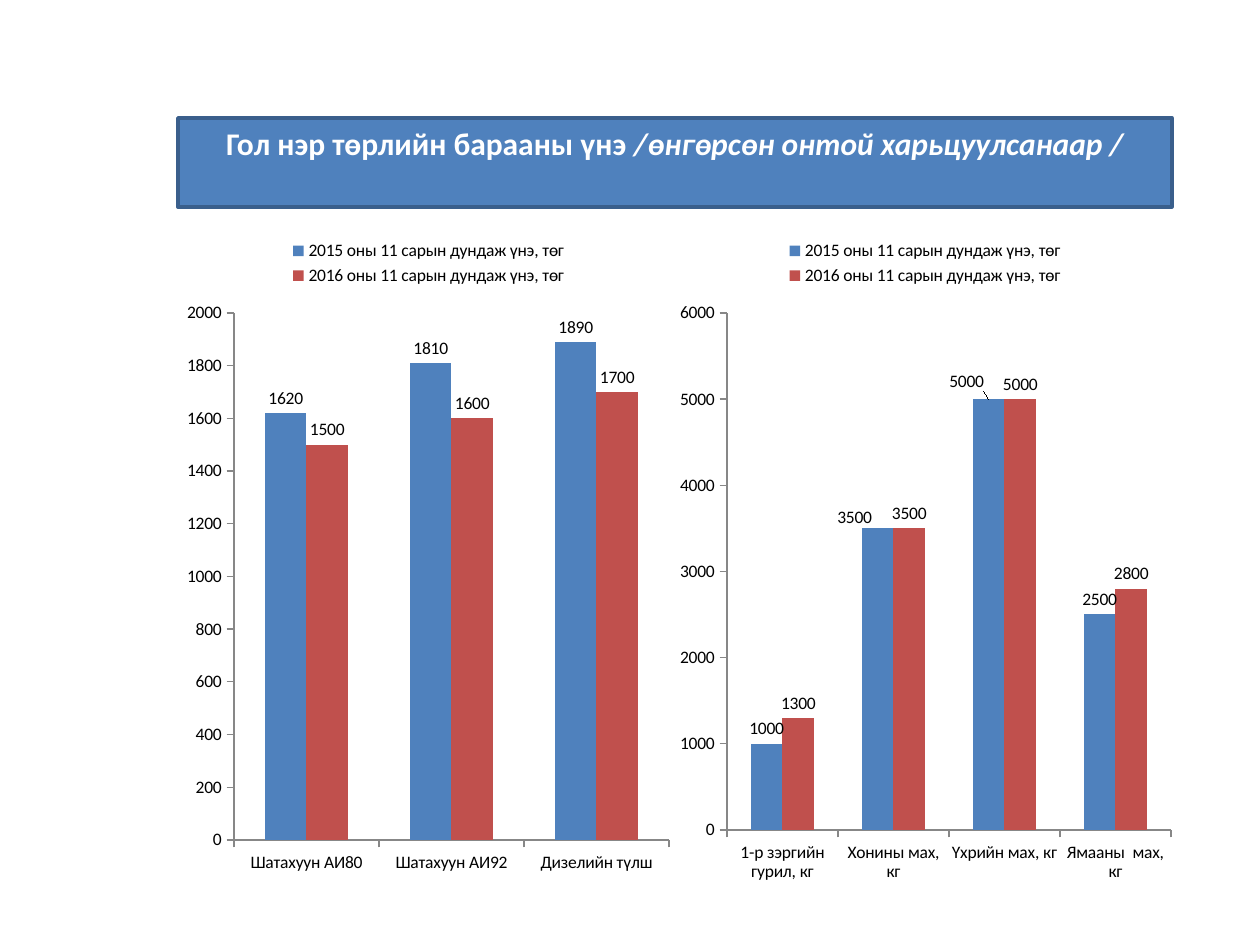
from lxml import etree
from pptx import Presentation
from pptx.chart.data import CategoryChartData
from pptx.dml.color import RGBColor
from pptx.enum.chart import XL_CHART_TYPE, XL_LABEL_POSITION, XL_LEGEND_POSITION, XL_TICK_MARK
from pptx.enum.shapes import MSO_SHAPE
from pptx.enum.text import MSO_ANCHOR, PP_ALIGN
from pptx.oxml.ns import qn
from pptx.util import Emu, Pt

COLUMNS = XL_CHART_TYPE.COLUMN_CLUSTERED
OUTSIDE_END = XL_LABEL_POSITION.OUTSIDE_END
LEGEND_TOP = XL_LEGEND_POSITION.TOP
TICK_OUT, TICK_NONE = XL_TICK_MARK.OUTSIDE, XL_TICK_MARK.NONE
RECTANGLE = MSO_SHAPE.RECTANGLE
TOP, CENTER = MSO_ANCHOR.TOP, PP_ALIGN.CENTER

PX_PER_INCH = 126
FONT = "Calibri"
YEARS = {
    "2015 оны 11 сарын дундаж үнэ, төг": "4F81BD",
    "2016 оны 11 сарын дундаж үнэ, төг": "C0504D",
}


def px(length):
    return Emu(round(length * 914400 / PX_PER_INCH))


def color(value):
    return RGBColor.from_string(value)


def set_format(target, **values):
    for name, value in values.items():
        setattr(target, name, value)


def set_font(font, size, hex_color, **values):
    set_format(font, name=FONT, size=Pt(size), **values)
    font.color.rgb = color(hex_color)


def manual_layout(**values):
    """Chart layout element; lengths are fractions of the chart."""
    layout = etree.Element(qn("c:layout"))
    manual = etree.SubElement(layout, qn("c:manualLayout"))
    for name, value in values.items():
        etree.SubElement(manual, qn(f"c:{name}")).set("val", str(value))
    return layout


def add_title(slide, box, runs):
    banner = slide.shapes.add_shape(RECTANGLE, *map(px, box))
    banner.shadow.inherit = False
    banner.fill.solid()
    banner.fill.fore_color.rgb = color("4F81BD")
    banner.line.color.rgb = color("3A5F8C")
    banner.line.width = Pt(2)
    set_format(banner.text_frame, word_wrap=True, vertical_anchor=TOP)
    paragraph = banner.text_frame.paragraphs[0]
    paragraph.alignment = CENTER
    for text, italic in runs:
        run = paragraph.add_run()
        run.text = text
        set_font(run.font, 18, "FFFFFF", bold=True, italic=italic)


def place_plot(chart, box, plot):
    """Fix the inner plot area, given in px relative to the chart box."""
    x, y, width, height = plot
    area = chart.plots[0]._element.getparent()
    for old in area.findall(qn("c:layout")):
        area.remove(old)
    area.insert(0, manual_layout(
        layoutTarget="inner", xMode="edge", yMode="edge",
        x=round(x / box[2], 4), y=round(y / box[3], 4),
        w=round(width / box[2], 4), h=round(height / box[3], 4)))


def shift_label(point, box, dx, dy):
    label = point.data_label
    set_font(label.font, 10, "000000")
    label.position = OUTSIDE_END
    element = label._dLbl
    element.insert(1, manual_layout(x=round(dx / box[2], 4), y=round(dy / box[3], 4)))


def add_price_chart(slide, box, plot, categories, prices, top, step, shifts):
    data = CategoryChartData(number_format="General")
    data.categories = categories
    for year, values in zip(YEARS, prices):
        data.add_series(year, values)
    chart = slide.shapes.add_chart(COLUMNS, *map(px, box), data).chart
    chart.has_title = False
    set_font(chart.font, 10, "000000")
    chart.has_legend = True
    set_format(chart.legend, position=LEGEND_TOP, include_in_layout=False)

    # Axes
    set_format(chart.value_axis, minimum_scale=0, maximum_scale=top, major_unit=step)
    for axis in (chart.category_axis, chart.value_axis):
        set_format(axis, has_major_gridlines=False,
                   major_tick_mark=TICK_OUT, minor_tick_mark=TICK_NONE)
        axis.format.line.color.rgb = color("878787")
        axis.format.line.width = Pt(0.75)

    # Columns and their values
    columns = chart.plots[0]
    set_format(columns, gap_width=150, overlap=0, vary_by_categories=False)
    for series, fill in zip(columns.series, YEARS.values()):
        series.format.fill.solid()
        series.format.fill.fore_color.rgb = color(fill)
        set_format(series.data_labels, show_value=True, position=OUTSIDE_END)
        set_font(series.data_labels.font, 10, "000000")
    for index, (dx, dy) in shifts.items():
        shift_label(columns.series[0].points[index], box, dx, dy)
    place_plot(chart, box, plot)


def main():
    prs = Presentation()
    prs.slide_width, prs.slide_height = px(1260), px(945)
    slide = prs.slides.add_slide(prs.slide_layouts[6])

    # Title banner
    add_title(slide, (178, 118, 994, 89), [
        ("Гол нэр төрлийн барааны үнэ ", False),
        ("/өнгөрсөн онтой харьцуулсанаар /", True),
    ])

    # Food prices
    add_price_chart(
        slide, (669, 227, 512, 669), (58, 86, 444, 517),
        ["1-р зэргийн гурил, кг", "Хонины мах, кг", "Үхрийн мах, кг", "Ямааны  мах, кг"],
        [(1000, 3500, 5000, 2500), (1300, 3500, 5000, 2800)],
        6000, 1000, {1: (-23, 4), 2: (-22, -3)})

    # Fuel prices
    add_price_chart(
        slide, (178, 227, 501, 659), (56, 86, 435, 527),
        ["Шатахуун АИ80", "Шатахуун АИ92", "Дизелийн түлш"],
        [(1620, 1810, 1890), (1500, 1600, 1700)],
        2000, 200, {})

    prs.save("out.pptx")


if __name__ == "__main__":
    main()
